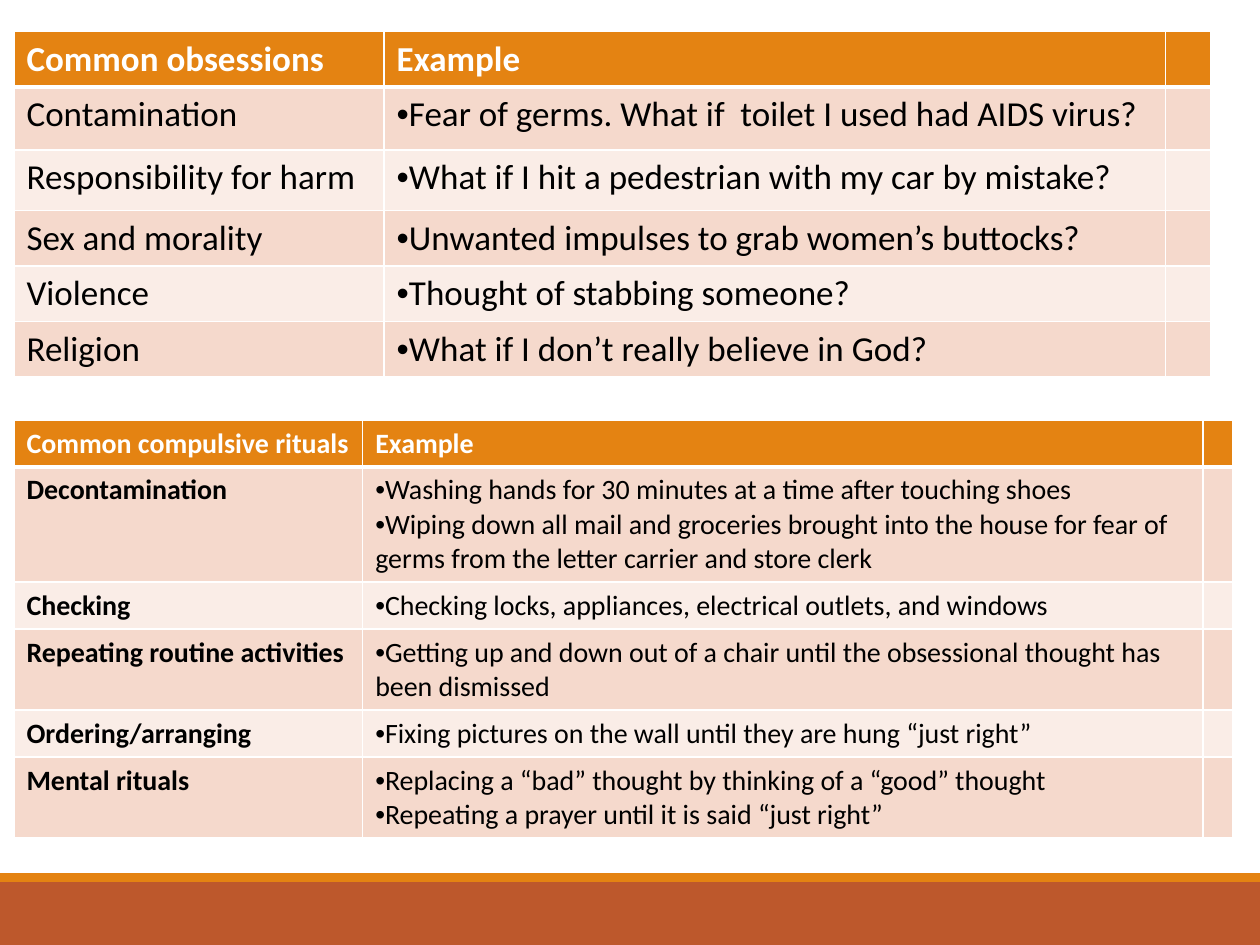
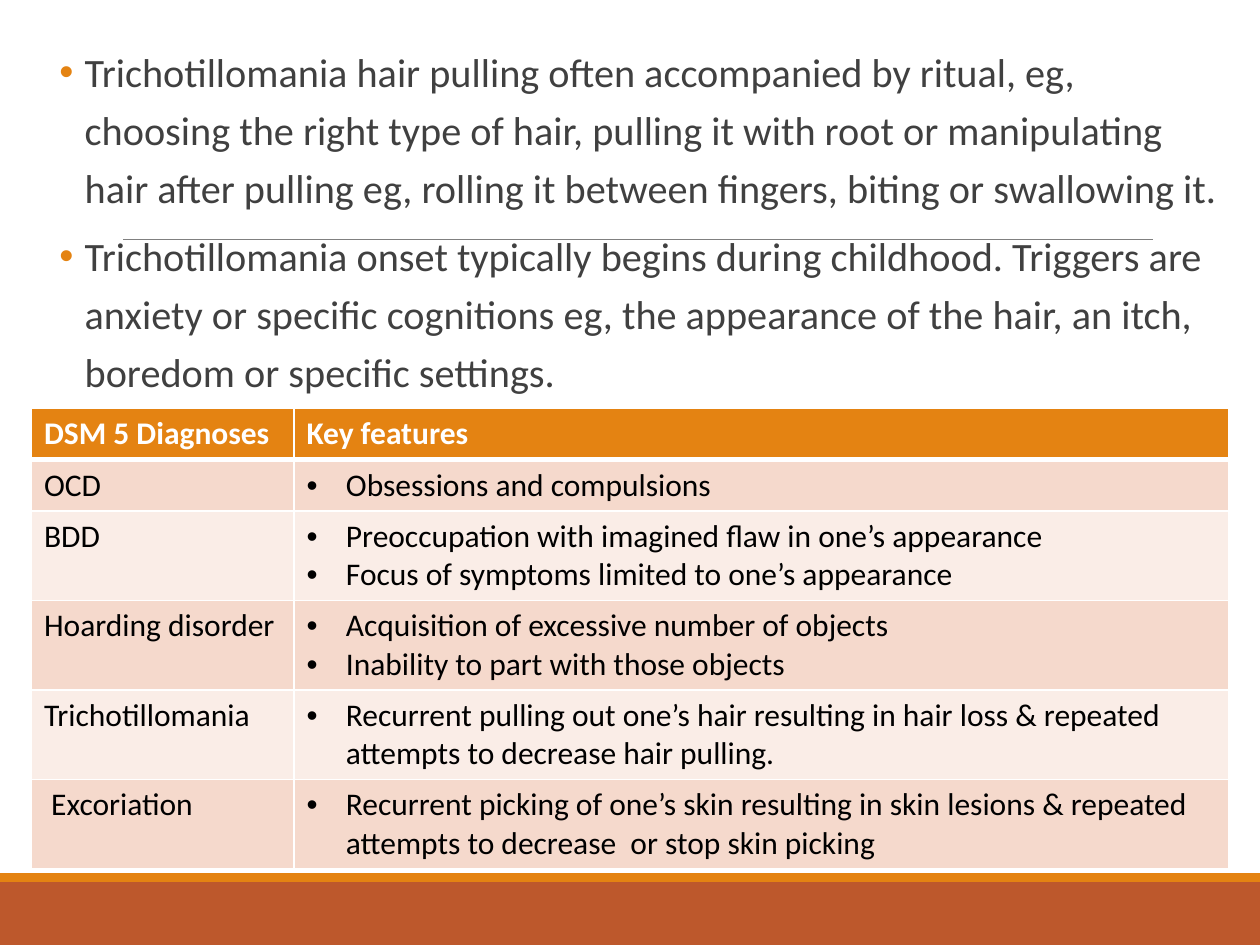
from lxml.etree import SubElement
from pptx import Presentation
from pptx.dml.color import RGBColor
from pptx.enum.shapes import MSO_CONNECTOR, MSO_SHAPE
from pptx.enum.text import MSO_ANCHOR, MSO_AUTO_SIZE
from pptx.oxml import parse_xml
from pptx.oxml.ns import nsdecls, qn
from pptx.util import Pt

COLOURS = {
    "rust": "BD582C",
    "orange": "E48312",
    "rule": "808080",
    "body": "404040",
    "black": "000000",
    "white": "FFFFFF",
    "band_dark": "F5D9CC",
    "band_light": "FAEDE7",
}
FONT = "Calibri"
LINE_HEIGHT = 1.22
CELL_MARGINS = 7.2

OBSESSIONS = [
    ("Common obsessions", ["Example"]),
    ("Contamination", ["Fear of germs. What if  toilet I used had AIDS virus?"]),
    ("Responsibility for harm", ["What if I hit a pedestrian with my car by mistake?"]),
    ("Sex and morality", ["Unwanted impulses to grab women’s buttocks?"]),
    ("Violence", ["Thought of stabbing someone?"]),
    ("Religion", ["What if I don’t really believe in God?"]),
]
RITUALS = [
    ("Common compulsive rituals", ["Example"]),
    ("Decontamination", [
        "Washing hands for 30 minutes at a time after touching shoes",
        "Wiping down all mail and groceries brought into the house for fear of "
        "germs from the letter carrier and store clerk"]),
    ("Checking", ["Checking locks, appliances, electrical outlets, and windows"]),
    ("Repeating routine activities", [
        "Getting up and down out of a chair until the obsessional thought has "
        "been dismissed"]),
    ("Ordering/arranging", ["Fixing pictures on the wall until they are hung “just right”"]),
    ("Mental rituals", [
        "Replacing a “bad” thought by thinking of a “good” thought",
        "Repeating a prayer until it is said “just right”"]),
]
DIAGNOSES = [
    ("DSM 5 Diagnoses", ["Key features"]),
    ("OCD", ["Obsessions and compulsions"]),
    ("BDD", [
        "Preoccupation with imagined flaw in one’s appearance",
        "Focus of symptoms limited to one’s appearance"]),
    ("Hoarding disorder", [
        "Acquisition of excessive number of objects",
        "Inability to part with those objects"]),
    ("Trichotillomania", [
        "Recurrent pulling out one’s hair resulting in hair loss & repeated "
        "attempts to decrease hair pulling."]),
    (" Excoriation", [
        "Recurrent picking of one’s skin resulting in skin lesions & repeated "
        "attempts to decrease  or stop skin picking"]),
]
TRICHOTILLOMANIA = [
    "Trichotillomania hair pulling often accompanied by ritual, eg, choosing the "
    "right type of hair, pulling it with root or manipulating hair after pulling "
    "eg, rolling it between fingers, biting or swallowing it.",
    "Trichotillomania onset typically begins during childhood. Triggers are "
    "anxiety or specific cognitions eg, the appearance of the hair, an itch, "
    "boredom or specific settings.",
]


def rgb(name):
    return RGBColor.from_string(COLOURS[name])


# Text
def add_bullet(paragraph, margin=0, hanging=0, colour=None):
    properties = paragraph._p.get_or_add_pPr()
    properties.set("marL", str(Pt(margin)))
    properties.set("indent", str(-Pt(hanging)))
    if colour:
        bullet_colour = SubElement(properties, qn("a:buClr"))
        SubElement(bullet_colour, qn("a:srgbClr"), val=COLOURS[colour])
    SubElement(properties, qn("a:buFont"), typeface="Arial")
    SubElement(properties, qn("a:buChar"), char="•")


def write_text(text_frame, texts, size=18, colour="black", bold=False, bullet=None,
               line_spacing=None, space_before=0, space_after=0):
    for index, text in enumerate(texts):
        paragraph = text_frame.paragraphs[0] if index == 0 else text_frame.add_paragraph()
        if bullet is not None:
            add_bullet(paragraph, **bullet)
        if line_spacing:
            paragraph.line_spacing = line_spacing
        paragraph.space_before = Pt(space_before if index else 0)
        paragraph.space_after = Pt(space_after)
        run = paragraph.add_run()
        run.text = text
        run.font.name = FONT
        run.font.size = Pt(size)
        run.font.bold = bold
        run.font.color.rgb = rgb(colour)


# Tables
def set_borders(cell, top=1, bottom=1):
    properties = cell._tc.get_or_add_tcPr()
    widths = {"lnL": 1, "lnR": 1, "lnT": top, "lnB": bottom}
    for position, (side, width) in enumerate(widths.items()):
        properties.insert(position, parse_xml(
            f'<a:{side} {nsdecls("a")} w="{Pt(width)}"><a:solidFill>'
            f'<a:srgbClr val="{COLOURS["white"]}"/></a:solidFill></a:{side}>'))


def add_banded_table(slide, left, top, column_widths, row_heights, rows, size,
                     bullet, bold_labels=False):
    table = slide.shapes.add_table(
        len(rows), len(column_widths), Pt(left), Pt(top),
        Pt(sum(column_widths)), Pt(sum(row_heights))).table
    for column, width in zip(table.columns, column_widths):
        column.width = Pt(width)
    for row_index, (label, details) in enumerate(rows):
        header = row_index == 0
        row = table.rows[row_index]
        row.height = Pt(row_heights[row_index])
        fill = "orange" if header else "band_dark" if row_index % 2 else "band_light"
        for cell in row.cells:
            cell.fill.solid()
            cell.fill.fore_color.rgb = rgb(fill)
            set_borders(cell, top=3 if row_index == 1 else 1, bottom=3 if header else 1)
        colour = "white" if header else "black"
        write_text(row.cells[0].text_frame, [label], size=size, colour=colour,
                   bold=header or bold_labels)
        write_text(row.cells[1].text_frame, details, size=size, colour=colour,
                   bold=header, bullet=None if header else bullet)
        # The narrow end column is empty but keeps the row's text size
        for cell in list(row.cells)[2:]:
            end_mark = cell.text_frame.paragraphs[0]._p.get_or_add_endParaRPr()
            end_mark.set("sz", str(size * 100))


def heights_for_lines(line_counts, size):
    return [round(count * size * LINE_HEIGHT + CELL_MARGINS, 1) for count in line_counts]


# Slide furniture
def add_band(slide, top, height, colour):
    band = slide.shapes.add_shape(MSO_SHAPE.RECTANGLE, 0, Pt(top), Pt(720), Pt(height))
    band.shadow.inherit = False
    band.fill.solid()
    band.fill.fore_color.rgb = rgb(colour)
    band.line.fill.background()


def add_footer_bands(slide):
    add_band(slide, 504, 36, "rust")
    add_band(slide, 499, 5, "orange")


def add_title_rule(slide):
    rule = slide.shapes.add_connector(
        MSO_CONNECTOR.STRAIGHT, Pt(70.5), Pt(136.8), Pt(659), Pt(136.8))
    rule.line.color.rgb = rgb("rule")
    rule.line.width = Pt(0.5)
    SubElement(rule._element.spPr, qn("a:effectLst"))


def place_body(slide, texts):
    body = slide.placeholders[1]
    body.left, body.top, body.width, body.height = Pt(18), Pt(18), Pt(684), Pt(501)
    frame = body.text_frame
    frame.word_wrap = True
    frame.auto_size = MSO_AUTO_SIZE.NONE
    frame.vertical_anchor = MSO_ANCHOR.TOP
    frame.margin_left = frame.margin_right = 0
    frame.margin_top = frame.margin_bottom = Pt(3.6)
    write_text(frame, texts, size=23, colour="body", line_spacing=1.2,
               space_before=2, space_after=4,
               bullet={"margin": 30.4, "hanging": 14.4, "colour": "orange"})
    # Bring the text in front of the rule
    slide.shapes._spTree.append(body._element)


# Slides
def add_obsessions_slide(presentation):
    slide = presentation.slides.add_slide(presentation.slide_layouts[6])
    add_footer_bands(slide)
    add_banded_table(slide, 8, 18, [211.5, 446.5, 26], [31.6, 36, 34.6, 31.6, 31.6, 31.6],
                     OBSESSIONS, size=20, bullet={})
    add_banded_table(slide, 8, 240, [199.3, 480.2, 16.7],
                     heights_for_lines([1, 3, 1, 2, 1, 2], 16),
                     RITUALS, size=16, bullet={}, bold_labels=True)


def add_diagnoses_slide(presentation):
    slide = presentation.slides.add_slide(presentation.slide_layouts[1])
    title = slide.shapes.title._element
    title.getparent().remove(title)
    add_footer_bands(slide)
    add_title_rule(slide)
    place_body(slide, TRICHOTILLOMANIA)
    add_banded_table(slide, 18, 233.5, [150, 534],
                     heights_for_lines([1, 1, 2, 2, 2, 2], 18),
                     DIAGNOSES, size=18, bullet={"margin": 22.5, "hanging": 22.5})


def main():
    presentation = Presentation()
    presentation.slide_width, presentation.slide_height = Pt(720), Pt(540)
    add_obsessions_slide(presentation)
    add_diagnoses_slide(presentation)
    presentation.save("out.pptx")


if __name__ == "__main__":
    main()
